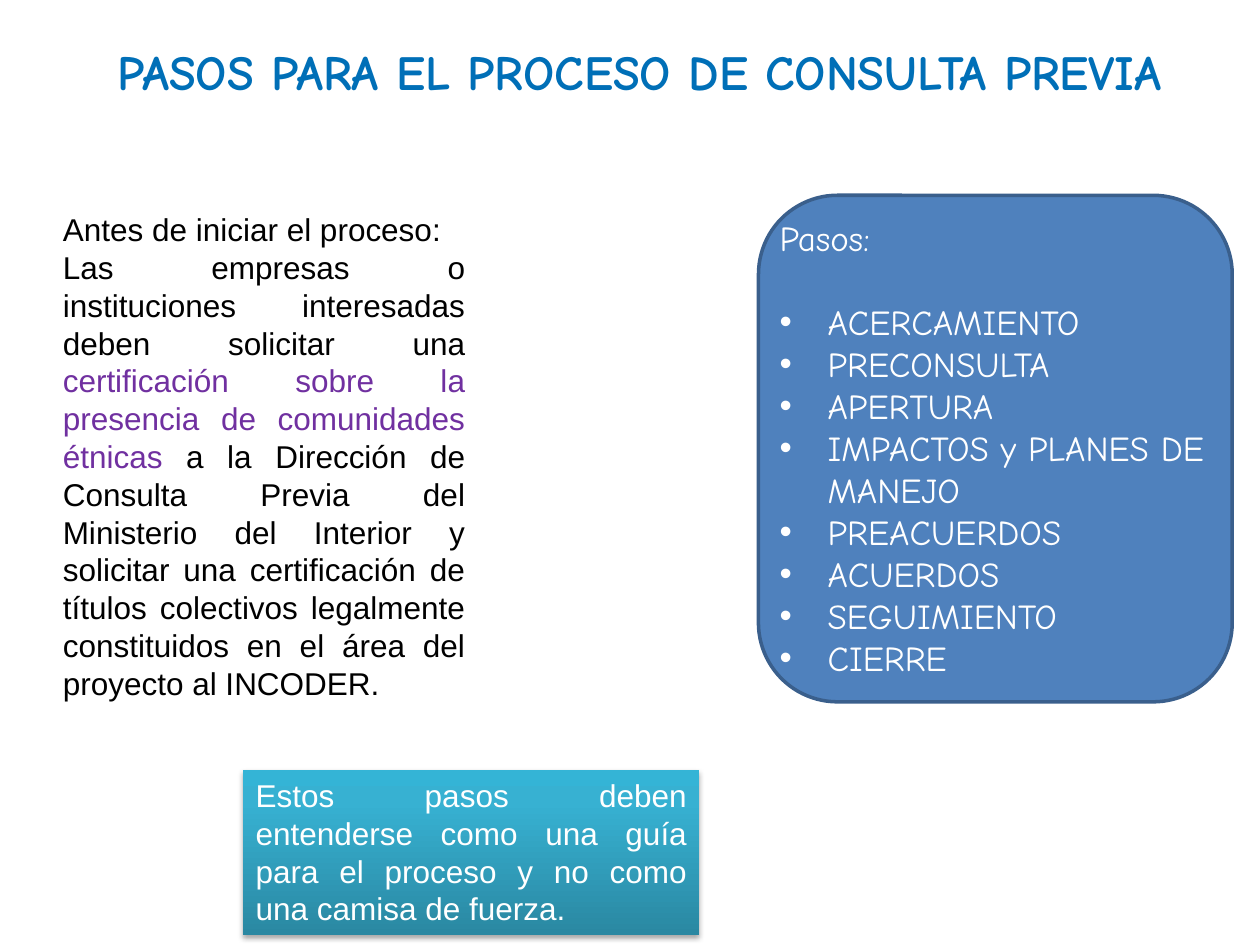
from lxml import etree
from pptx import Presentation
from pptx import util as u
from pptx import oxml
from pptx.dml.color import RGBColor
from pptx.enum import shapes, text
from pptx.oxml import ns

Inches, Pt = u.Inches, u.Pt
HUES = {
    "title": "006FB7", "panel": "4F81BD", "edge": "3A5F8C",
    "white": "FFFFFF", "black": "000000", "mark": "7030A0",
    "low": "2A88A2", "mid": "37B1D2", "high": "34B4D6",
}
STEPS = ["ACERCAMIENTO", "PRECONSULTA", "APERTURA",
         "IMPACTOS y PLANES DE MANEJO", "PREACUERDOS", "ACUERDOS",
         "SEGUIMIENTO", "CIERRE"]
INTRO = [
    [("Antes de iniciar el proceso:", "black")],
    [("Las empresas o instituciones interesadas deben solicitar una ", "black"),
     ("certificación sobre la presencia de comunidades étnicas ", "mark"),
     ("a la Dirección de Consulta Previa del Ministerio del Interior y "
      "solicitar una certificación de títulos colectivos legalmente "
      "constituidos en el área del proyecto al INCODER.", "black")],
]


def hue(name):
    return RGBColor.from_string(HUES[name])


def style(font, face, size, color, bold=False):
    font.name, font.size, font.bold = face, Pt(size), bold
    font.color.rgb = hue(color)


def add_text(slide, box):
    frame = slide.shapes.add_textbox(*map(Inches, box)).text_frame
    frame.word_wrap = True
    return frame


def add_bullet(para):
    props = para._p.get_or_add_pPr()
    props.set("marL", str(Inches(0.38)))
    props.set("indent", str(-Inches(0.38)))
    etree.SubElement(props, ns.qn("a:buFont")).set("typeface", "Arial")
    etree.SubElement(props, ns.qn("a:buChar")).set("char", "•")


def add_title(slide, box):
    frame = add_text(slide, box)
    frame.vertical_anchor = text.MSO_ANCHOR.MIDDLE
    frame.text = "PASOS PARA EL PROCESO DE CONSULTA PREVIA"
    para = frame.paragraphs[0]
    para.alignment = text.PP_ALIGN.CENTER
    style(para.runs[0].font, "Comic Neue", 28, "title", True)


def add_intro(slide, box):
    frame = add_text(slide, box)
    for i, parts in enumerate(INTRO):
        para = frame.add_paragraph() if i else frame.paragraphs[0]
        para.alignment = text.PP_ALIGN.JUSTIFY
        for words, color in parts:
            run = para.add_run()
            run.text = words
            style(run.font, "Arial", 18, color)


def add_steps(slide, box):
    left, top, width, height = box
    panel = slide.shapes.add_shape(
        shapes.MSO_SHAPE.ROUNDED_RECTANGLE, *map(Inches, box))
    panel.shadow.inherit = False
    panel.fill.solid()
    panel.fill.fore_color.rgb = hue("panel")
    panel.line.color.rgb = hue("edge")
    panel.line.width = Pt(2)

    frame = add_text(slide, (left + 0.07, top + 0.12, width - 0.06, height - 0.22))
    frame.text = "\n".join(["Pasos:"] + STEPS)
    head, *items = frame.paragraphs
    head.space_after = Pt(24)
    for para in items:
        add_bullet(para)
    for para in frame.paragraphs:
        style(para.font, "Comic Neue", 20, "white")
        style(para.runs[0].font, "Comic Neue", 20, "white")


def add_note(slide, box):
    note = slide.shapes.add_shape(
        shapes.MSO_SHAPE.RECTANGLE, *map(Inches, box))
    note.line.fill.background()
    note.shadow.inherit = False
    props = note._element.spPr
    stops = "".join(
        f'<a:gs pos="{pos * 1000}"><a:srgbClr val="{HUES[name]}"/></a:gs>'
        for pos, name in ((0, "low"), (80, "mid"), (100, "high")))
    props.find(ns.qn("a:prstGeom")).addnext(oxml.parse_xml(
        f'<a:gradFill {ns.nsdecls("a")} rotWithShape="1"><a:gsLst>{stops}'
        '</a:gsLst><a:lin ang="16200000" scaled="0"/></a:gradFill>'))
    props.find(ns.qn("a:effectLst")).append(oxml.parse_xml(
        f'<a:outerShdw {ns.nsdecls("a")} blurRad="{Pt(3.1)}" dist="{Pt(1.8)}" '
        f'dir="5400000" rotWithShape="0"><a:srgbClr val="{HUES["black"]}">'
        '<a:alpha val="35000"/></a:srgbClr></a:outerShdw>'))

    frame = note.text_frame
    frame.word_wrap = True
    frame.vertical_anchor = text.MSO_ANCHOR.TOP
    frame.text = ("Estos pasos deben entenderse como una guía para el proceso "
                  "y no como una camisa de fuerza.")
    para = frame.paragraphs[0]
    para.alignment = text.PP_ALIGN.JUSTIFY
    style(para.runs[0].font, "Arial", 18, "white")


def main():
    deck = Presentation()
    deck.slide_width, deck.slide_height = Inches(10), Inches(7.5)
    slide = deck.slides.add_slide(deck.slide_layouts[6])
    add_title(slide, (0.51, 0.13, 9.13, 0.87))
    add_steps(slide, (6.02, 1.55, 3.76, 4.02))
    add_note(slide, (1.93, 6.11, 3.62, 1.31))
    add_intro(slide, (0.4, 1.62, 3.39, 4.04))
    deck.save("out.pptx")


if __name__ == "__main__":
    main()
